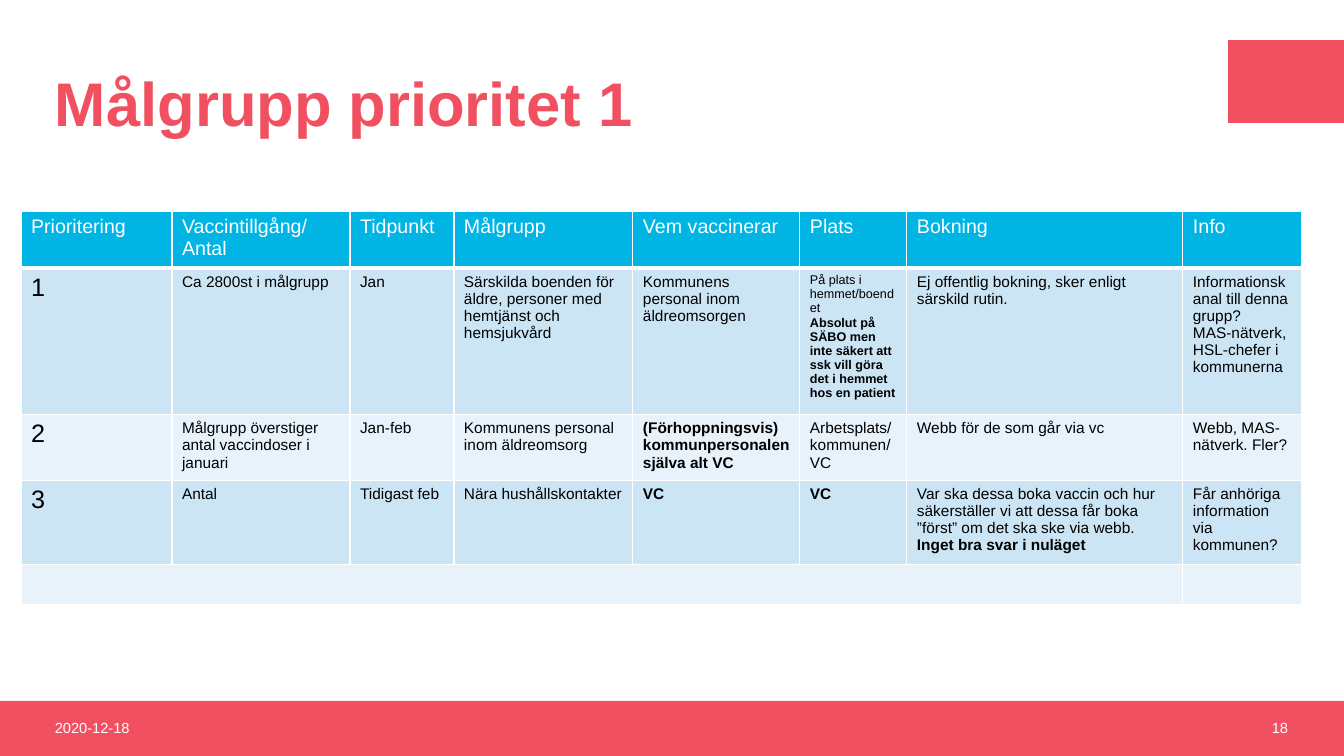
from dataclasses import dataclass

from lxml import etree
from pptx import Presentation
from pptx.dml.color import RGBColor
from pptx.enum.shapes import MSO_SHAPE
from pptx.enum.text import MSO_ANCHOR, PP_ALIGN
from pptx.oxml.ns import qn
from pptx.slide import Slide
from pptx.table import _Cell
from pptx.text.text import TextFrame
from pptx.util import Emu, Pt

RECT = MSO_SHAPE.RECTANGLE
MIDDLE = MSO_ANCHOR.MIDDLE
LEFT = PP_ALIGN.LEFT
RIGHT = PP_ALIGN.RIGHT

RED = RGBColor(0xF1, 0x50, 0x60)
BLUE = RGBColor(0x00, 0xB4, 0xE4)
PALE = RGBColor(0xCC, 0xE5, 0xF5)
LIGHT = RGBColor(0xE7, 0xF2, 0xFA)
WHITE = RGBColor(0xFF, 0xFF, 0xFF)
BLACK = RGBColor(0x00, 0x00, 0x00)

FONT = "Arial"
WIDTH, HEIGHT = 1344, 756


def px(count: int) -> Emu:
    return Emu(12192000 * count // WIDTH)


@dataclass(frozen=True)
class Box:
    left: int
    top: int
    width: int
    height: int

    def place(self) -> tuple[Emu, ...]:
        return tuple(px(n) for n in (self.left, self.top, self.width, self.height))


@dataclass(frozen=True)
class Run:
    text: str
    size: float = 11
    bold: bool = False
    color: RGBColor = BLACK


Lines = list[list[Run]]


@dataclass(frozen=True)
class Label:
    box: Box
    run: Run
    align: PP_ALIGN = LEFT
    space: float = 1.0


@dataclass(frozen=True)
class Row:
    height: int
    fill: RGBColor
    cells: list[Lines]


def plain(*texts: str) -> Lines:
    return [[Run(text)] for text in texts]


def strong(text: str) -> Lines:
    return [[Run(text, bold=True)]]


def number(text: str) -> Lines:
    return [[Run(text, 18)]]


def header(*texts: str) -> Lines:
    return [[Run(text, 14, color=WHITE)] for text in texts]


BARS = [Box(0, 701, WIDTH, 55), Box(1228, 40, 116, 83)]

LABELS = [
    Label(Box(45, 40, 1170, 133), Run("Målgrupp prioritet 1", 44, True, RED), space=0.9),
    Label(Box(45, 701, 302, 54), Run("2020-12-18", 10.5, color=WHITE)),
    Label(Box(996, 701, 302, 54), Run("18", 10.5, color=WHITE), RIGHT),
]

GRID = Box(21, 211, 1281, 377)
COLUMNS = [151, 178, 104, 179, 167, 107, 276, 119]
ROWS = [
    Row(54, BLUE, [
        header("Prioritering"),
        header("Vaccintillgång/", "Antal"),
        header("Tidpunkt"),
        header("Målgrupp"),
        header("Vem vaccinerar"),
        header("Plats"),
        header("Bokning"),
        header("Info"),
    ]),
    Row(145, PALE, [
        number("1"),
        plain("Ca 2800st i målgrupp"),
        plain("Jan"),
        plain("Särskilda boenden för äldre, personer med hemtjänst och hemsjukvård"),
        plain("Kommunens personal inom äldreomsorgen"),
        [
            [Run("På plats i hemmet/boendet", 9)],
            [Run("Absolut på SÄBO men inte säkert att ssk vill göra "
                 "det i hemmet hos en patient", 9, True)],
        ],
        plain("Ej offentlig bokning, sker enligt särskild rutin."),
        plain("Informationskanal till denna grupp?", "MAS-nätverk, HSL-chefer i kommunerna"),
    ]),
    Row(61, LIGHT, [
        number("2"),
        plain("Målgrupp överstiger antal vaccindoser i januari"),
        plain("Jan-feb"),
        plain("Kommunens personal inom äldreomsorg"),
        strong("(Förhoppningsvis) kommunpersonalen själva alt VC"),
        plain("Arbetsplats/ kommunen/VC"),
        plain("Webb för de som går via vc"),
        plain("Webb, MAS-nätverk. Fler?"),
    ]),
    Row(79, PALE, [
        number("3"),
        plain("Antal"),
        plain("Tidigast feb"),
        plain("Nära hushållskontakter"),
        strong("VC"),
        strong("VC"),
        [[
            Run("Var ska dessa boka vaccin och hur säkerställer vi att dessa "
                "får boka ”först” om det ska ske via webb. "),
            Run("Inget bra svar i nuläget", bold=True),
        ]],
        plain("Får anhöriga information via kommunen?"),
    ]),
    Row(38, LIGHT, [[] for _ in COLUMNS]),
]


def write(frame: TextFrame, lines: Lines, align: PP_ALIGN = LEFT, space: float = 1.0) -> None:
    for index, line in enumerate(lines):
        para = frame.add_paragraph() if index else frame.paragraphs[0]
        para.alignment = align
        para.line_spacing = space
        for item in line:
            run = para.add_run()
            run.text = item.text
            run.font.name = FONT
            run.font.size = Pt(item.size)
            run.font.bold = item.bold
            run.font.color.rgb = item.color


def draw_bar(slide: Slide, box: Box) -> None:
    bar = slide.shapes.add_shape(RECT, *box.place())
    bar.shadow.inherit = False
    bar.fill.solid()
    bar.fill.fore_color.rgb = RED
    bar.line.fill.background()


def draw_label(slide: Slide, label: Label) -> None:
    frame = slide.shapes.add_textbox(*label.box.place()).text_frame
    frame.word_wrap = True
    frame.vertical_anchor = MIDDLE
    write(frame, [[label.run]], label.align, label.space)


def edge(cell: _Cell, base: int) -> None:
    props = cell._tc.get_or_add_tcPr()
    for side, width in (("L", 1), ("R", 1), ("T", 1), ("B", base)):
        line = etree.SubElement(props, qn(f"a:ln{side}"), w=str(Pt(width)))
        fill = etree.SubElement(line, qn("a:solidFill"))
        etree.SubElement(fill, qn("a:srgbClr"), val=str(WHITE))


def draw_table(slide: Slide) -> None:
    table = slide.shapes.add_table(len(ROWS), len(COLUMNS), *GRID.place()).table
    table.first_row = False
    table.horz_banding = False
    for column, width in zip(table.columns, COLUMNS):
        column.width = px(width)
    for index, row in enumerate(ROWS):
        table.rows[index].height = px(row.height)
        for cell, lines in zip(table.rows[index].cells, row.cells):
            edge(cell, 1 if index else 3)
            cell.fill.solid()
            cell.fill.fore_color.rgb = row.fill
            write(cell.text_frame, lines)
    last = len(ROWS) - 1
    table.cell(last, 0).merge(table.cell(last, len(COLUMNS) - 2))


def main() -> None:
    deck = Presentation()
    deck.slide_width = px(WIDTH)
    deck.slide_height = px(HEIGHT)
    slide = deck.slides.add_slide(deck.slide_layouts[6])
    for box in BARS:
        draw_bar(slide, box)
    for label in LABELS:
        draw_label(slide, label)
    draw_table(slide)
    deck.save("out.pptx")


if __name__ == "__main__":
    main()
